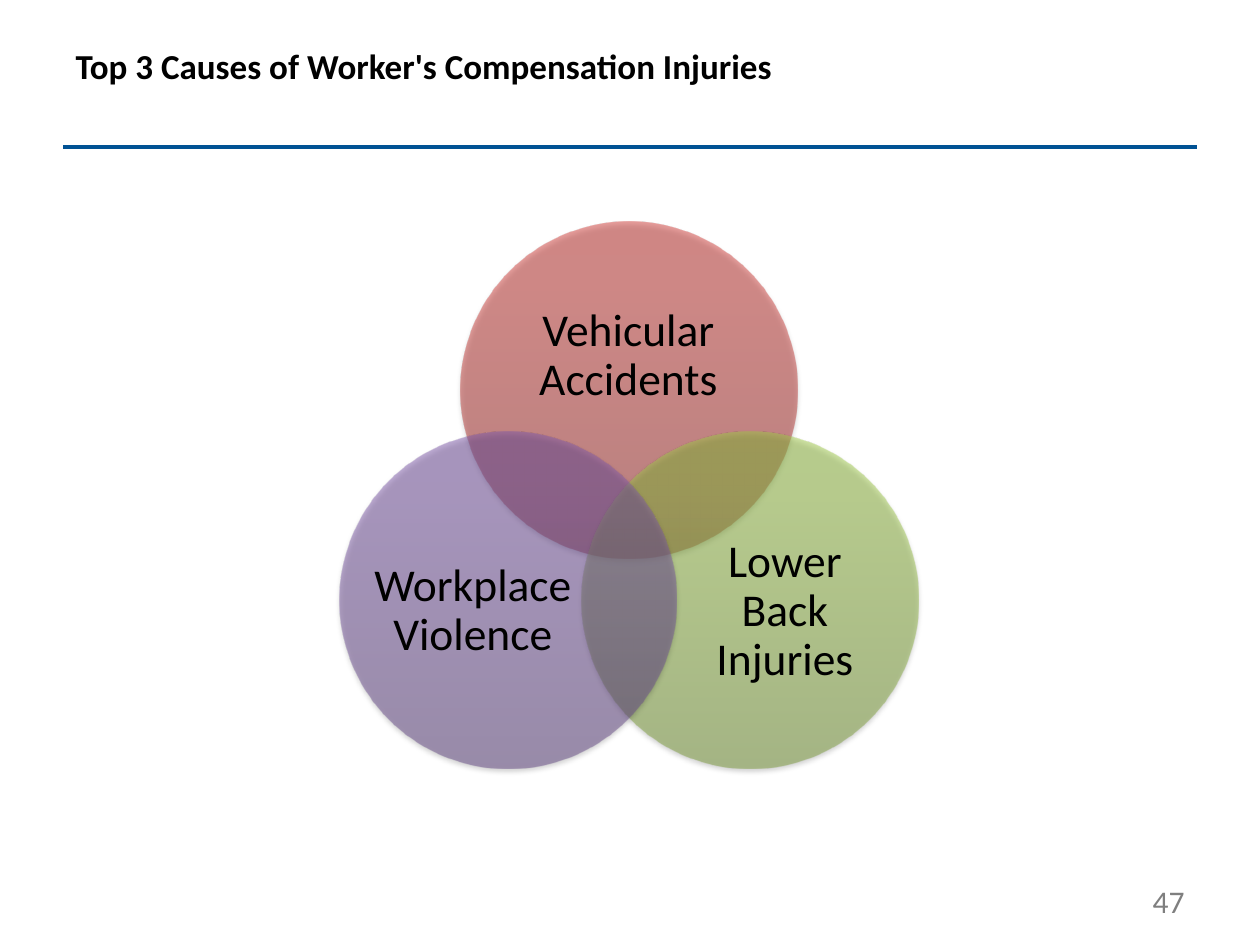
from dataclasses import dataclass

from lxml import etree
from pptx import Presentation
from pptx import util as u
from pptx.dml.color import RGBColor
from pptx.enum import shapes, text
from pptx.oxml import ns

PX = 914400 / 126
DIAMETER = 336
SPREAD, DROP = 121, 210
TOP_LEFT = (461, 222)
COLORS = {
    "rule": "005294",
    "text": "000000",
    "number": "7F7F7F",
    "shadow": "000000",
    "red": ("9C2F2D", "CB3E3A", "CE3B37"),
    "green": ("779737", "9BC348", "9DC746"),
    "purple": ("5F4480", "7B58A6", "7C57A8"),
}
STOPS = (0, 80, 100)


@dataclass
class Cause:
    label: str
    color: str
    column: int
    row: int
    label_box: tuple[int, int, int, int]


CAUSES = [
    Cause("Vehicular Accidents", "red", 0, 0, (505, 281, 247, 151)),
    Cause("Lower Back Injuries", "green", 1, 1, (684, 519, 202, 185)),
    Cause("Workplace Violence", "purple", -1, 1, (372, 519, 202, 185)),
]


def px(*values: int) -> list[int]:
    return [round(v * PX) for v in values]


def child(parent, tag: str, **attrs):
    values = {key: str(value) for key, value in attrs.items()}
    return etree.SubElement(parent, ns.qn(tag), values)


def write(shape, words: str, size: int, color: str, align, anchor,
          bold: bool = False, spacing: float | None = None, inset: int | None = None) -> None:
    tf = shape.text_frame
    tf.word_wrap = True
    tf.auto_size = text.MSO_AUTO_SIZE.NONE
    tf.vertical_anchor = anchor
    if inset is not None:
        for side in ("left", "top", "right", "bottom"):
            setattr(tf, f"margin_{side}", inset)
    p = tf.paragraphs[0]
    p.alignment = align
    p.line_spacing = spacing
    r = p.add_run()
    r.text = words
    for name, value in {"name": "Calibri", "size": u.Pt(size), "bold": bold}.items():
        setattr(r.font, name, value)
    r.font.color.rgb = RGBColor.from_string(COLORS[color])


def add_rule(s) -> None:
    line = s.shapes.add_connector(shapes.MSO_CONNECTOR.STRAIGHT, *px(63, 147, 1197, 147))
    line.line.width = u.Pt(2)
    line.line.color.rgb = RGBColor.from_string(COLORS["rule"])
    child(line.element.spPr, "a:effectLst")


def add_circle(group, cause: Cause) -> None:
    left = TOP_LEFT[0] + cause.column * SPREAD
    top = TOP_LEFT[1] + cause.row * DROP
    sp = group.shapes.add_shape(shapes.MSO_SHAPE.OVAL, *px(left, top, DIAMETER, DIAMETER))
    sp.line.fill.background()
    sp.shadow.inherit = False

    props = sp.element.spPr
    gradient = etree.Element(ns.qn("a:gradFill"), rotWithShape="1")
    stops = child(gradient, "a:gsLst")
    for position, color in zip(STOPS, COLORS[cause.color]):
        stop = child(stops, "a:gs", pos=position * 1000)
        child(child(stop, "a:srgbClr", val=color), "a:alpha", val=50000)
    child(gradient, "a:lin", ang=270 * 60000, scaled=0)
    props.find(ns.qn("a:prstGeom")).addnext(gradient)

    shadow = child(props.find(ns.qn("a:effectLst")), "a:outerShdw",
                   blurRad=u.Pt(3.1), dist=u.Pt(1.8), dir=90 * 60000, rotWithShape=0)
    child(child(shadow, "a:srgbClr", val=COLORS["shadow"]), "a:alpha", val=35000)


def add_cause(group, cause: Cause) -> None:
    add_circle(group, cause)
    label = group.shapes.add_textbox(*px(*cause.label_box))
    write(label, cause.label, 26, "text", text.PP_ALIGN.CENTER,
          text.MSO_ANCHOR.MIDDLE, spacing=0.9, inset=0)


def main() -> None:
    prs = Presentation()
    prs.slide_width, prs.slide_height = px(1260, 945)
    s = prs.slides.add_slide(prs.slide_layouts[5])
    add_rule(s)

    title = s.shapes.title
    title.left, title.top, title.width, title.height = px(63, 38, 1134, 109)
    write(title, "Top 3 Causes of Worker's Compensation Injuries", 20, "text",
          text.PP_ALIGN.LEFT, text.MSO_ANCHOR.TOP, bold=True)

    number = s.shapes.add_textbox(*px(903, 876, 294, 50))
    write(number, "47", 18, "number", text.PP_ALIGN.RIGHT, text.MSO_ANCHOR.MIDDLE)

    venn = s.shapes.add_group_shape()
    for cause in CAUSES:
        add_cause(venn, cause)

    prs.save("out.pptx")


if __name__ == "__main__":
    main()
